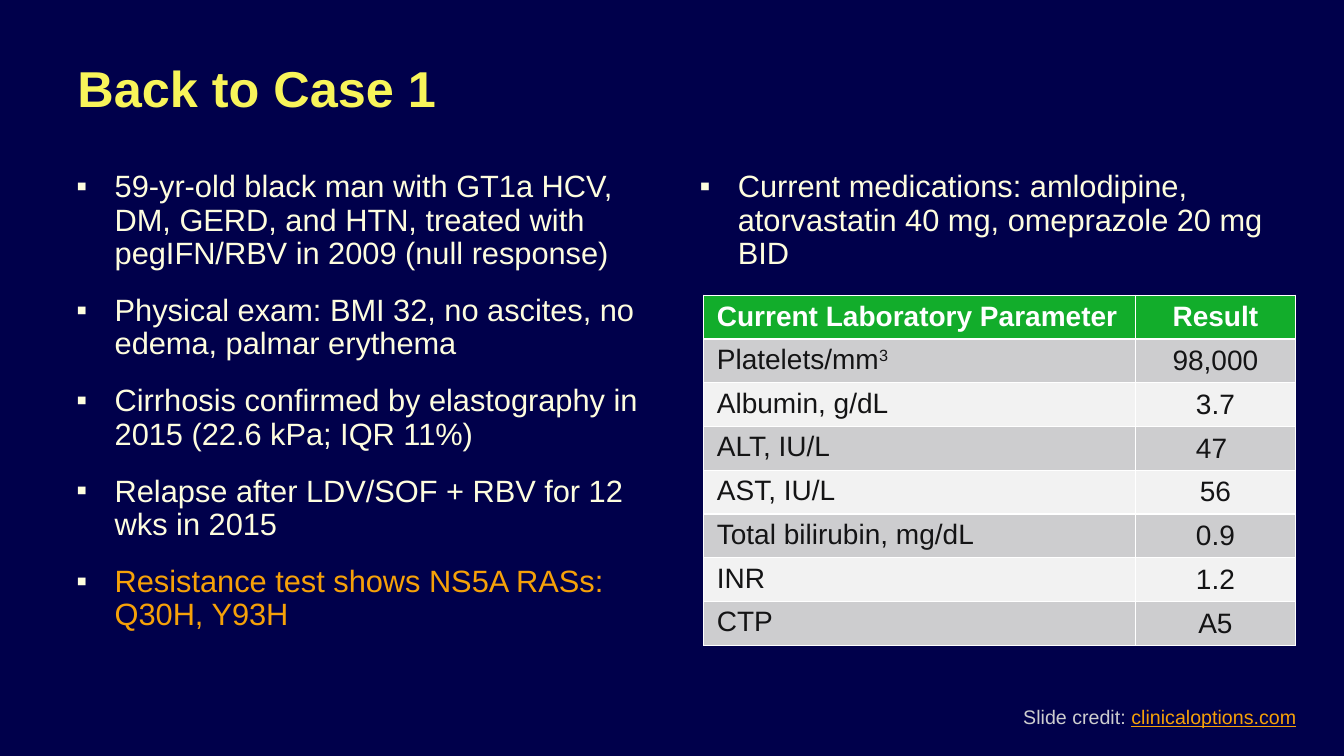
from lxml import etree
from pptx import Presentation
from pptx.dml.color import RGBColor
from pptx.enum.text import MSO_ANCHOR, PP_ALIGN
from pptx.oxml.ns import qn
from pptx.util import Inches, Pt

MIDDLE, TOP = MSO_ANCHOR.MIDDLE, MSO_ANCHOR.TOP
LEFT, CENTER = PP_ALIGN.LEFT, PP_ALIGN.CENTER

NAVY, YELLOW, CREAM, ORANGE = "00004B", "F8F45A", "FEFDDE", "F6A108"
GREEN, WHITE, GRAY, PALE, INK = "12AD2B", "FFFFFF", "CDCDCF", "F2F2F2", "141415"

TITLE = "Back to Case 1"
HISTORY = [
    ("59-yr-old black man with GT1a HCV, DM, GERD, and HTN, treated with "
     "pegIFN/RBV in 2009 (null response)", CREAM),
    ("Physical exam: BMI 32, no ascites, no edema, palmar erythema", CREAM),
    ("Cirrhosis confirmed by elastography in 2015 (22.6 kPa; IQR 11%)", CREAM),
    ("Relapse after LDV/SOF + RBV for 12 wks in 2015", CREAM),
    ("Resistance test shows NS5A RASs: Q30H, Y93H", ORANGE),
]
MEDICATIONS = [
    ("Current medications: amlodipine, atorvastatin 40 mg, omeprazole 20 mg BID", CREAM),
]
LABS = [
    ("Current Laboratory Parameter", "Result"),
    ("Platelets/mm", "98,000"),
    ("Albumin, g/dL", "3.7"),
    ("ALT, IU/L", "47 "),
    ("AST, IU/L", "56"),
    ("Total bilirubin, mg/dL", "0.9"),
    ("INR", "1.2"),
    ("CTP", "A5"),
]
SUPERSCRIPTS = {"Platelets/mm": "3"}
LAB_WIDTHS = (4.28, 1.59)
LAB_ROW_HEIGHT = 3.47 / len(LABS)
CREDIT = [("Slide credit: ", GRAY, False), ("clinicaloptions.com", ORANGE, True)]


def rgb(color):
    return RGBColor.from_string(color)


def set_font(font, size, color, bold=False):
    font.name = "Arial"
    font.size = Pt(size)
    font.bold = bold
    font.color.rgb = rgb(color)


def add_text_frame(slide, left, top, width, height, wrap=True):
    box = slide.shapes.add_textbox(Inches(left), Inches(top), Inches(width), Inches(height))
    box.text_frame.word_wrap = wrap
    return box.text_frame


def add_bullet(paragraph):
    properties = paragraph._p.get_or_add_pPr()
    properties.set("marL", str(Inches(0.38)))
    properties.set("indent", str(-Inches(0.38)))
    bullet_color = etree.SubElement(properties, qn("a:buClr"))
    etree.SubElement(bullet_color, qn("a:srgbClr"), val=CREAM)
    etree.SubElement(properties, qn("a:buFont"), typeface="Arial")
    etree.SubElement(properties, qn("a:buChar"), char="▪")


def add_bullet_list(slide, left, items):
    frame = add_text_frame(slide, left, 1.65, 5.8, 5.12)
    for index, (text, color) in enumerate(items):
        paragraph = frame.add_paragraph() if index else frame.paragraphs[0]
        paragraph.text = text
        add_bullet(paragraph)
        paragraph.line_spacing = 0.9
        paragraph.space_before = Pt(10 if index else 0)
        paragraph.space_after = Pt(7)
        set_font(paragraph.font, 22, color)


def add_lab_table(slide):
    labs = slide.shapes.add_table(
        len(LABS), len(LAB_WIDTHS), Inches(6.98), Inches(2.93),
        Inches(sum(LAB_WIDTHS)), Inches(LAB_ROW_HEIGHT * len(LABS))).table
    for column, width in zip(labs.columns, LAB_WIDTHS):
        column.width = Inches(width)
    for row_index, lab in enumerate(LABS):
        labs.rows[row_index].height = Inches(LAB_ROW_HEIGHT)
        is_header = row_index == 0
        fill = GREEN if is_header else (PALE, GRAY)[row_index % 2]
        for column_index, text in enumerate(lab):
            is_result = column_index == 1
            cell = labs.cell(row_index, column_index)
            cell.fill.solid()
            cell.fill.fore_color.rgb = rgb(fill)
            cell.margin_left = cell.margin_right = Inches(0.13)
            cell.margin_top = cell.margin_bottom = Inches(0.05)
            cell.vertical_anchor = MIDDLE if is_header or is_result else TOP
            paragraph = cell.text_frame.paragraphs[0]
            paragraph.text = text
            paragraph.alignment = CENTER if is_result else LEFT
            set_font(paragraph.font, 20, WHITE if is_header else INK, is_header)
            if text in SUPERSCRIPTS:
                exponent = paragraph.add_run()
                exponent.text = SUPERSCRIPTS[text]
                exponent._r.get_or_add_rPr().set("baseline", "30000")


def add_credit(slide):
    paragraph = add_text_frame(slide, 10.05, 6.94, 2.92, 0.34, wrap=False).paragraphs[0]
    for text, color, underlined in CREDIT:
        run = paragraph.add_run()
        run.text = text
        set_font(run.font, 14, color)
        run.font.underline = underlined


def main():
    deck = Presentation()
    deck.slide_width, deck.slide_height = Inches(13.33), Inches(7.5)
    slide = deck.slides.add_slide(deck.slide_layouts[6])
    slide.background.fill.solid()
    slide.background.fill.fore_color.rgb = rgb(NAVY)

    title = add_text_frame(slide, 0.67, 0.26, 11.89, 1.21)
    title.vertical_anchor = MIDDLE
    title.text = TITLE
    set_font(title.paragraphs[0].font, 36, YELLOW, True)

    add_bullet_list(slide, 0.66, HISTORY)
    add_bullet_list(slide, 6.84, MEDICATIONS)
    add_credit(slide)
    add_lab_table(slide)
    deck.save("out.pptx")


if __name__ == "__main__":
    main()
